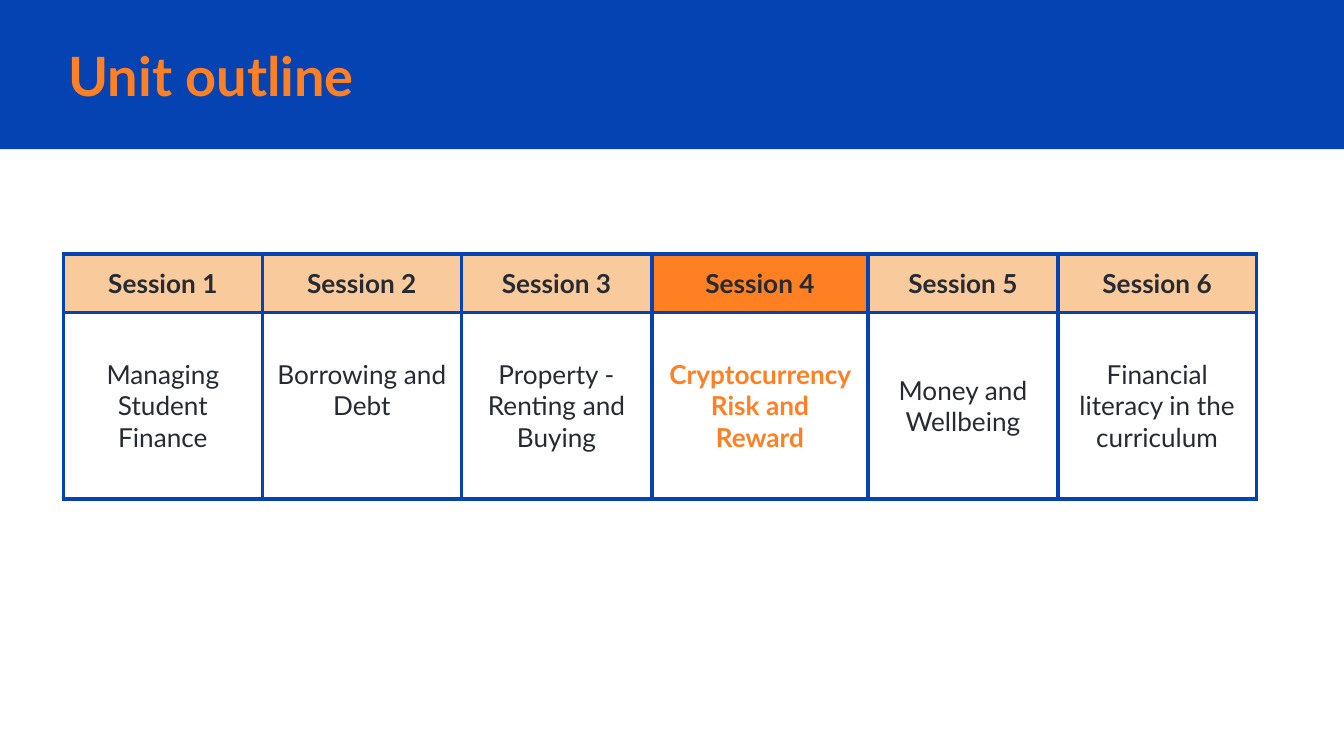
"""Build the unit outline slide with its table of six sessions."""
from lxml.etree import SubElement
from pptx import Presentation
from pptx.dml.color import RGBColor
from pptx.enum.shapes import MSO_SHAPE
from pptx.enum.text import MSO_ANCHOR, MSO_AUTO_SIZE, PP_ALIGN
from pptx.oxml.ns import qn
from pptx.util import Pt

HEADING = "Unit outline"
TOPICS = [
    "Managing Student Finance",
    "Borrowing and Debt",
    "Property - Renting and Buying",
    "Cryptocurrency Risk and Reward",
    "Money and Wellbeing",
    "Financial literacy in the curriculum",
]
CURRENT_SESSION = 4
RAISED_SESSION = 2
COLORS = {
    "blue": "0543B3",
    "orange": "FF8022",
    "peach": "F9CB9C",
    "ink": "262A33",
    "white": "FFFFFF",
}
FONT = "Lato"
SLIDE_WIDTH, SLIDE_HEIGHT = 720, 405
BAND_HEIGHT = 80
TABLE_LEFT, TABLE_TOP = 34, 136.2
COLUMN_WIDTHS = [106.6, 106.6, 102, 116, 101.5, 106.6]
ROW_HEIGHTS = [31.3, 99.7]
INSET = 7.2
LINE_HEIGHT = 17
BORDER_WIDTH = 2.25


def color(name):
    return RGBColor.from_string(COLORS[name])


def style_text(frame, size, color_name, bold, align):
    paragraph = frame.paragraphs[0]
    paragraph.alignment = align
    font = paragraph.runs[0].font
    font.name, font.size, font.bold = FONT, Pt(size), bold
    font.color.rgb = color(color_name)


def add_borders(cell):
    properties = cell._tc.get_or_add_tcPr()
    for side in ("a:lnL", "a:lnR", "a:lnT", "a:lnB"):
        border = SubElement(properties, qn(side), w=str(Pt(BORDER_WIDTH)))
        fill = SubElement(border, qn("a:solidFill"))
        SubElement(fill, qn("a:srgbClr"), val=COLORS["blue"])


def fill_cell(cell, text, background, text_color, bold):
    add_borders(cell)
    cell.fill.solid()
    cell.fill.fore_color.rgb = color(background)
    cell.vertical_anchor = MSO_ANCHOR.MIDDLE
    cell.margin_left = cell.margin_right = Pt(INSET)
    cell.margin_top = cell.margin_bottom = Pt(INSET)
    cell.text_frame.text = text
    style_text(cell.text_frame, 14, text_color, bold, PP_ALIGN.CENTER)


def add_heading(slide):
    heading = slide.shapes.title
    heading.left, heading.top = Pt(29.5), Pt(20)
    heading.width, heading.height = Pt(609), Pt(40.5)
    frame = heading.text_frame
    frame.text = HEADING
    frame.word_wrap = True
    frame.auto_size = MSO_AUTO_SIZE.NONE
    frame.vertical_anchor = MSO_ANCHOR.MIDDLE
    frame.margin_left = frame.margin_right = Pt(INSET)
    frame.margin_top = frame.margin_bottom = Pt(INSET)
    style_text(frame, 29, "orange", True, PP_ALIGN.LEFT)

    band = slide.shapes.add_shape(
        MSO_SHAPE.RECTANGLE, 0, 0, Pt(SLIDE_WIDTH), Pt(BAND_HEIGHT))
    band.shadow.inherit = False
    band.fill.solid()
    band.fill.fore_color.rgb = color("blue")
    band.line.fill.background()
    heading.element.addprevious(band.element)


def add_sessions(slide):
    table = slide.shapes.add_table(
        len(ROW_HEIGHTS), len(TOPICS), Pt(TABLE_LEFT), Pt(TABLE_TOP),
        Pt(sum(COLUMN_WIDTHS)), Pt(sum(ROW_HEIGHTS))).table
    table.horz_banding = False
    for row, height in zip(table.rows, ROW_HEIGHTS):
        row.height = Pt(height)
    for column, width in zip(table.columns, COLUMN_WIDTHS):
        column.width = Pt(width)
    for index, topic in enumerate(TOPICS):
        session = index + 1
        current = session == CURRENT_SESSION
        fill_cell(table.cell(0, index), f"Session {session}",
                  "orange" if current else "peach", "ink", True)
        fill_cell(table.cell(1, index), topic, "white",
                  "orange" if current else "ink", current)
    table.cell(1, RAISED_SESSION - 1).margin_bottom = Pt(INSET + LINE_HEIGHT)


def main():
    presentation = Presentation()
    presentation.slide_width = Pt(SLIDE_WIDTH)
    presentation.slide_height = Pt(SLIDE_HEIGHT)
    slide = presentation.slides.add_slide(presentation.slide_layouts[5])
    add_heading(slide)
    add_sessions(slide)
    presentation.save("out.pptx")


if __name__ == "__main__":
    main()
